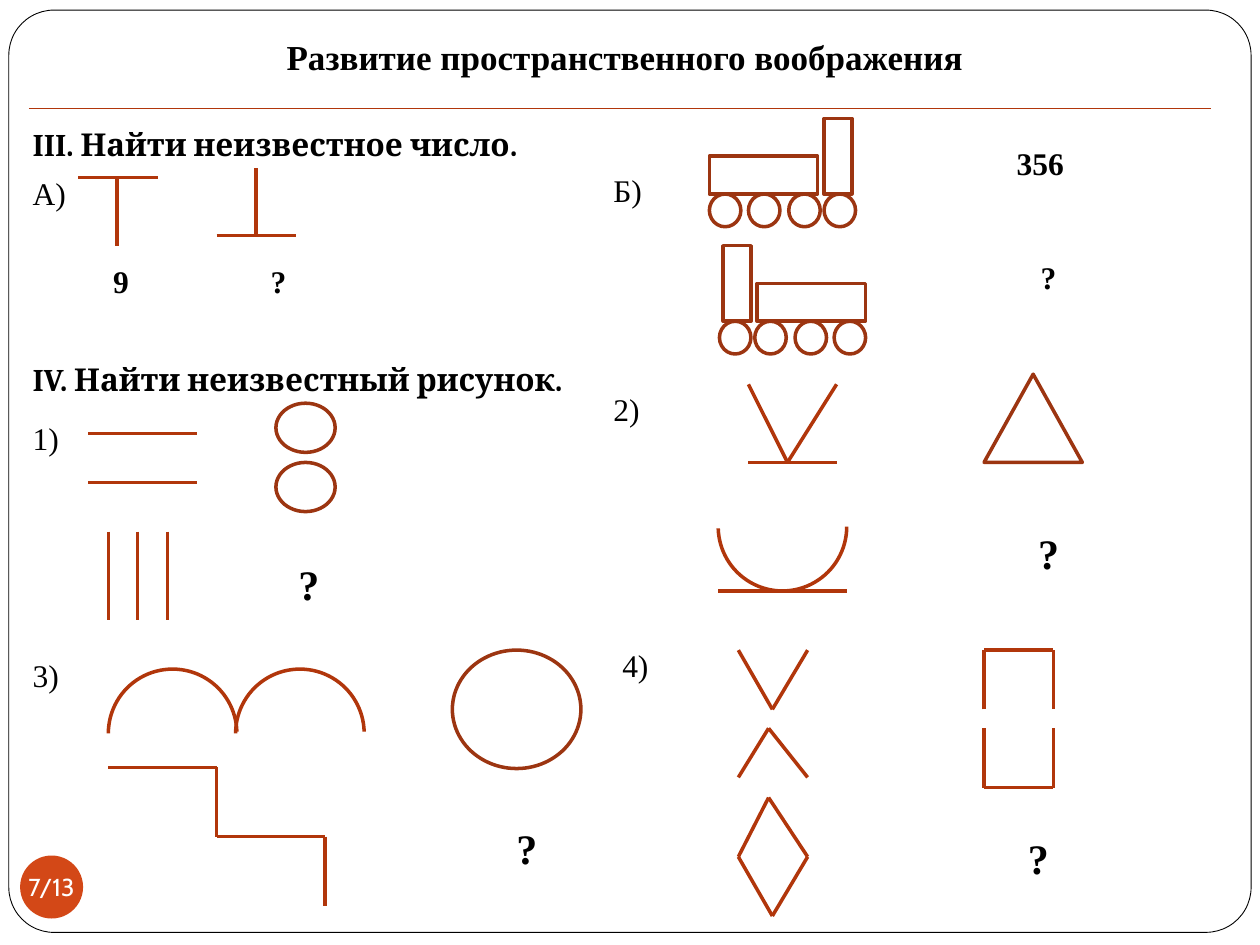
from pptx import Presentation
from pptx.dml.color import RGBColor
from pptx.enum.shapes import MSO_CONNECTOR, MSO_SHAPE
from pptx.enum.text import MSO_ANCHOR, MSO_AUTO_SIZE, PP_ALIGN
from pptx.oxml.ns import qn
from pptx.util import Inches, Pt
from lxml.etree import SubElement

COLORS = {"paper": "FFFFFF", "ink": "000000", "stroke": "B1360B",
          "outline": "9C3511", "badge": "D34817"}
SERIF, HEADING, NUMBER = "Times New Roman", "Cambria", "Cabin"


def color(name):
    return RGBColor.from_string(COLORS[name])


class Worksheet:
    """Holds the style, the current slide and the figure being drawn."""

    def __init__(self, page):
        self.page = page
        self.target = page.shapes

    def begin_figure(self):
        self.target = self.page.shapes.add_group_shape().shapes

    def shape(self, kind, x, y, w, h, fill="paper", line="outline", width=2):
        shape = self.target.add_shape(kind, Inches(x), Inches(y), Inches(w), Inches(h))
        shape.shadow.inherit = False
        if fill:
            shape.fill.solid()
            shape.fill.fore_color.rgb = color(fill)
        else:
            shape.fill.background()
        if line:
            shape.line.color.rgb = color(line)
            shape.line.width = Pt(width)
        else:
            shape.line.fill.background()
        return shape

    def half_circle(self, x, y, size, rotation):
        arc = self.shape(MSO_SHAPE.ARC, x, y, size, size, None, "stroke")
        arc.adjustments[0], arc.adjustments[1] = 162, 53.1
        arc.rotation = rotation

    def line(self, start, end, width=2):
        x1, y1, x2, y2 = (Inches(v) for v in (*start, *end))
        line = self.target.add_connector(MSO_CONNECTOR.STRAIGHT, x1, y1, x2, y2)
        line.line.color.rgb = color("stroke")
        line.line.width = Pt(width)
        SubElement(line._element.spPr, qn("a:effectLst"))

    def path_of_lines(self, *points):
        for start, end in zip(points, points[1:]):
            self.line(start, end)

    def span(self, para, text, size=18, font=SERIF, bold=False, ink="ink"):
        span = para.add_run()
        span.text = text
        span.font.size, span.font.name, span.font.bold = Pt(size), font, bold
        span.font.color.rgb = color(ink)

    def text(self, x, y, w, h, *lines, align=PP_ALIGN.LEFT, anchor=MSO_ANCHOR.TOP,
             indent=0, tab=None, gap=0, **style):
        box = self.page.shapes.add_textbox(Inches(x), Inches(y), Inches(w), Inches(h))
        frame = box.text_frame
        frame.word_wrap = True
        frame.auto_size = MSO_AUTO_SIZE.SHAPE_TO_FIT_TEXT
        frame.vertical_anchor = anchor
        for number, line in enumerate(lines):
            para = frame.add_paragraph() if number else frame.paragraphs[0]
            para.alignment = align
            settings = para._p.get_or_add_pPr()
            if number:
                para.space_before = Pt(gap)
            # Only the last line of a box is indented
            if indent and number == len(lines) - 1:
                settings.set("marL", str(Inches(indent)))
            if tab:
                stops = SubElement(settings, qn("a:tabLst"))
                SubElement(stops, qn("a:tab"), pos=str(Inches(tab)), algn="l")
            self.span(para, line, **style)

    def question(self, x, y, indent=0.25):
        self.text(x, y, 0.78, 0.5, "?", indent=indent, size=24, bold=True)

    def truck(self, dy=0, mirror=None):
        self.begin_figure()
        rect, oval = MSO_SHAPE.RECTANGLE, MSO_SHAPE.OVAL
        parts = [(rect, 5.63, 1.24, 0.86, 0.3), (rect, 6.54, 0.94, 0.22, 0.6)]
        parts += [(oval, x, 1.54, 0.25, 0.26) for x in (5.63, 5.94, 6.26, 6.54)]
        for kind, x, y, w, h in parts:
            left = mirror - x - w if mirror else x
            self.shape(kind, left, y + dy, w, h)


def main():
    deck = Presentation()
    deck.slide_width, deck.slide_height = Inches(10), Inches(7.5)
    sheet = Worksheet(deck.slides.add_slide(deck.slide_layouts[6]))

    # Frame, title and page number
    frame = sheet.shape(MSO_SHAPE.ROUNDED_RECTANGLE, 0.07, 0.08, 9.86, 7.32,
                        line="ink", width=0.5)
    frame.adjustments[0] = 0.049
    sheet.line((0.23, 0.86), (9.61, 0.86), 0.75)
    sheet.text(0.86, 0.23, 8.2, 0.44, "Развитие пространственного воображения",
               align=PP_ALIGN.CENTER, size=20, bold=True)
    badge = sheet.shape(MSO_SHAPE.OVAL, 0.16, 6.79, 0.5, 0.5, "badge", None)
    label = badge.text_frame
    label.margin_left = label.margin_right = label.margin_top = label.margin_bottom = 0
    label.word_wrap = False
    label.vertical_anchor = MSO_ANCHOR.MIDDLE
    label.paragraphs[0].alignment = PP_ALIGN.CENTER
    sheet.span(label.paragraphs[0], "7/13", 14, NUMBER, ink="paper")

    # Section headings and task labels
    sheet.text(0.16, 0.94, 9.61, 0.4, "III. Найти неизвестное число.",
               anchor=MSO_ANCHOR.MIDDLE, font=HEADING, bold=True)
    sheet.text(0.16, 2.81, 9.45, 0.4, "IV. Найти неизвестный рисунок.",
               font=HEADING, bold=True)
    for x, y, name in ((0.16, 1.33, "А)"), (4.77, 1.31, "Б)"), (0.16, 3.28, "1)"),
                       (4.77, 3.05, "2)"), (0.16, 5.16, "3)"), (4.84, 5.08, "4)")):
        sheet.text(x, y, 0.55, 0.4, name)

    # Task А: upright and inverted T
    for x, bar, end in ((0.62, 1.41, 1.95), (1.72, 1.87, 1.33)):
        sheet.begin_figure()
        sheet.line((x, bar), (x + 0.63, bar))
        sheet.line((x + 0.31, bar), (x + 0.31, end))
    sheet.text(0.8, 2.03, 2.17, 0.4, "9\t?", tab=1.25, bold=True)

    # Task Б: truck and its mirror image
    sheet.truck()
    sheet.truck(dy=1.01, mirror=12.5)
    sheet.text(7.97, 1.09, 1.25, 1.31, "356", "?", indent=0.19, gap=44, bold=True)

    # Task 1: pairs of lines and ovals, three bars
    sheet.begin_figure()
    for y in (3.44, 3.83):
        sheet.line((0.7, y), (1.56, y))
    for y in (3.2, 3.67):
        sheet.shape(MSO_SHAPE.OVAL, 2.19, y, 0.47, 0.39)
    for x in (0.86, 1.09, 1.33):
        sheet.line((x, 4.22), (x, 4.92))
    sheet.question(2.19, 4.38, indent=0.08)

    # Task 2: triangle and half circle on a base line
    sheet.begin_figure()
    sheet.path_of_lines((5.94, 3.05), (6.25, 3.67), (6.64, 3.05))
    sheet.line((5.94, 3.67), (6.64, 3.67))
    sheet.shape(MSO_SHAPE.ISOSCELES_TRIANGLE, 7.81, 2.97, 0.78, 0.7)
    sheet.half_circle(5.7, 3.67, 1.02, 90)
    sheet.line((5.7, 4.69), (6.72, 4.69))
    sheet.question(7.89, 4.14)

    # Task 3: two arches, a circle and stairs
    sheet.begin_figure()
    for x in (0.86, 1.87):
        sheet.half_circle(x, 5.31, 1.02, 270)
    sheet.shape(MSO_SHAPE.OVAL, 3.59, 5.16, 1.02, 0.94)
    sheet.path_of_lines((0.86, 6.09), (1.72, 6.09), (1.72, 6.64),
                        (2.58, 6.64), (2.58, 7.19))
    sheet.question(3.75, 6.48)

    # Task 4: angles, a rhombus and open boxes
    sheet.begin_figure()
    sheet.path_of_lines((5.86, 5.16), (6.13, 5.63), (6.41, 5.16))
    sheet.path_of_lines((5.86, 6.17), (6.1, 5.78), (6.41, 6.17))
    sheet.path_of_lines((5.86, 6.8), (6.1, 6.33), (6.41, 6.8), (6.13, 7.27), (5.86, 6.8))
    for edge, end in ((5.16, 5.63), (6.25, 5.78)):
        sheet.path_of_lines((7.81, end), (7.81, edge), (8.36, edge), (8.36, end))
    sheet.question(7.81, 6.56)

    deck.save("out.pptx")


if __name__ == "__main__":
    main()
